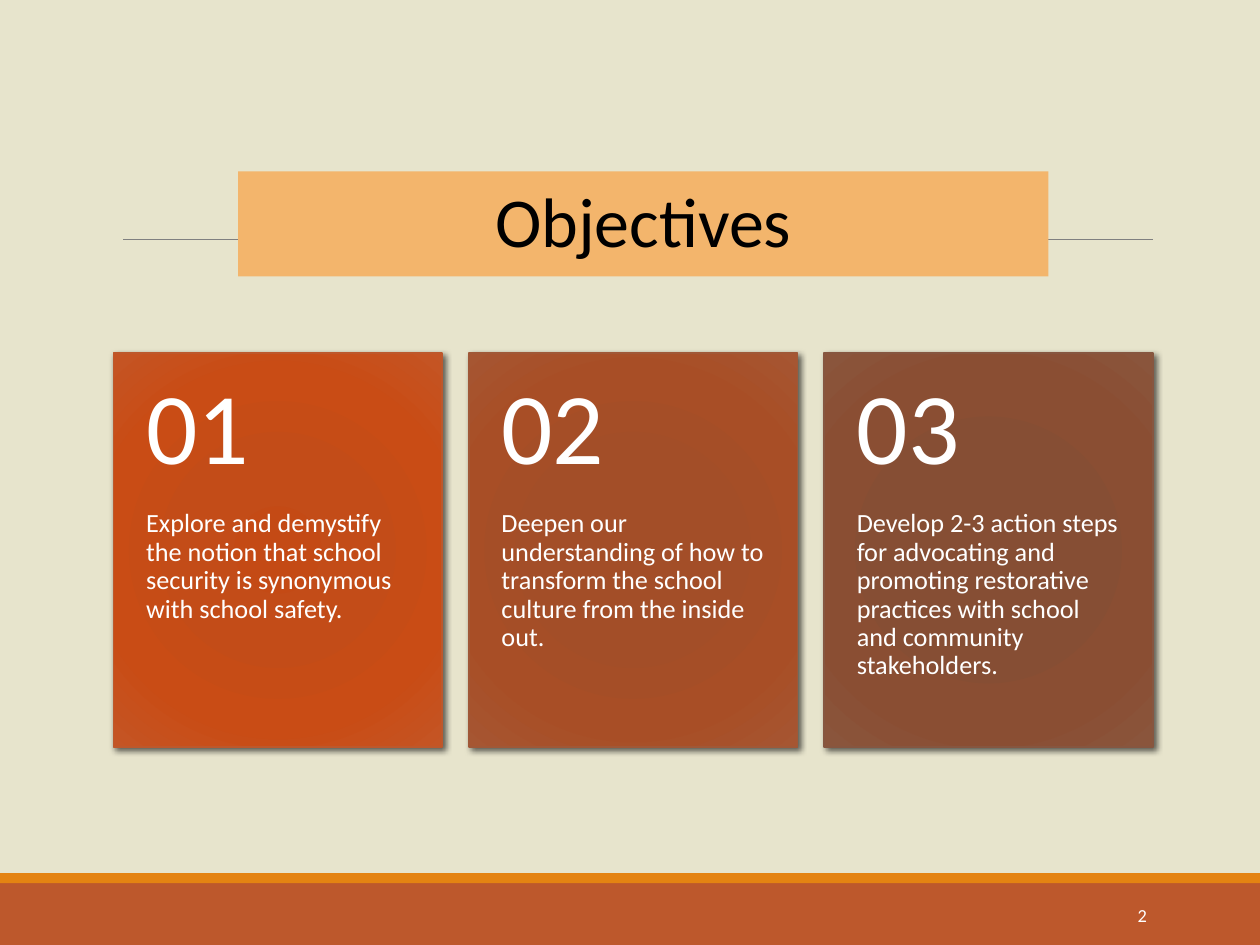
from dataclasses import dataclass

from lxml.etree import SubElement
from pptx import Presentation
from pptx.dml.color import RGBColor as RGB
from pptx.enum.shapes import MSO_CONNECTOR as CONN, MSO_SHAPE as SHAPE
from pptx.enum.text import MSO_ANCHOR as ANCHOR, MSO_AUTO_SIZE as AUTO, PP_ALIGN as ALIGN
from pptx.oxml import parse_xml
from pptx.oxml.ns import nsdecls, qn
from pptx.util import Inches, Pt


@dataclass(frozen=True)
class Theme:
    font: str = "Calibri"
    background: str = "E7E4CC"
    orange: str = "E48312"
    rust: str = "BD582C"
    banner: str = "F3B56C"
    rule: str = "808080"
    dark: str = "000000"
    light: str = "FFFFFF"
    title_size: float = 40
    number_size: float = 58
    body_size: float = 15
    page_size: float = 10.5


@dataclass(frozen=True)
class Card:
    text: str
    stops: tuple[str, str, str, str]
    border: str


THEME = Theme()
STOP_POSITIONS = (0, 34, 70, 100)
CARD_LEFT, CARD_TOP, CARD_STEP = 0.9, 2.8, 2.82
CARD_W, CARD_H, NUMBER_H = 2.61, 3.13, 1.25
CARDS = (
    Card("Explore and demystify the notion that school security is synonymous with school safety.",
         ("C44A15", "C34C18", "C94C15", "C45525"), "BD582C"),
    Card("Deepen our understanding of how to transform the school culture from the inside out.",
         ("A44C25", "A34E28", "A84E26", "A65632"), "A05837"),
    Card("Develop 2-3 action steps for advocating and promoting restorative practices "
         "with school and community stakeholders.",
         ("874C32", "864E34", "8A4E33", "8A553C"), "865640"),
)


def write_text(s, text: str, *, size: float, color: str = THEME.light, align=ALIGN.LEFT,
               anchor=ANCHOR.TOP, insets=(0.1, 0.05, 0.1, 0.05), spacing=None, after=0):
    tf = s.text_frame
    tf.word_wrap = True
    tf.vertical_anchor = anchor
    tf.margin_left, tf.margin_top, tf.margin_right, tf.margin_bottom = map(Inches, insets)
    p = tf.paragraphs[0]
    p.alignment, p.line_spacing, p.space_after = align, spacing, Pt(after)
    r = p.add_run()
    r.text = text
    r.font.name, r.font.size = THEME.font, Pt(size)
    r.font.color.rgb = RGB.from_string(color)


def add_text(slide, box: tuple, text: str, **fmt):
    write_text(slide.shapes.add_textbox(*map(Inches, box)), text, **fmt)


def fill_solid(s, color: str):
    s.fill.solid()
    s.fill.fore_color.rgb = RGB.from_string(color)


def add_bar(slide, top: float, height: float, color: str):
    s = slide.shapes.add_shape(SHAPE.RECTANGLE, 0, Inches(top), Inches(10), Inches(height))
    s.shadow.inherit = False
    fill_solid(s, color)
    s.line.fill.background()


def add_rule(slide, left: float, right: float, y: float):
    line = slide.shapes.add_connector(CONN.STRAIGHT, *map(Inches, (left, y, right, y)))
    line.line.color.rgb = RGB.from_string(THEME.rule)
    line.line.width = Pt(0.5)
    SubElement(line.element.spPr, qn("a:effectLst"))


def style_panel(s, card: Card):
    """Give the panel a radial gradient, a thin border and a soft shadow."""
    s.line.color.rgb = RGB.from_string(card.border)
    s.line.width = Pt(1)
    stops = "".join(f'<a:gs pos="{pos * 1000}"><a:srgbClr val="{color}"/></a:gs>'
                    for pos, color in zip(STOP_POSITIONS, card.stops))
    gradient = parse_xml(
        f'<a:gradFill {nsdecls("a")} rotWithShape="1"><a:gsLst>{stops}</a:gsLst><a:path path="circle">'
        '<a:fillToRect l="100000" t="100000" r="100000" b="100000"/></a:path></a:gradFill>')
    shadow = parse_xml(
        f'<a:effectLst {nsdecls("a")}><a:outerShdw blurRad="{Pt(3.5)}" dist="{Pt(2)}" dir="2700000" '
        'algn="br" rotWithShape="0"><a:srgbClr val="000000"><a:alpha val="60000"/></a:srgbClr>'
        '</a:outerShdw></a:effectLst>')
    sp_pr = s.element.spPr
    sp_pr.find(qn("a:prstGeom")).addnext(gradient)
    sp_pr.find(qn("a:ln")).addnext(shadow)


def add_card(slide, index: int, card: Card):
    left = CARD_LEFT + index * CARD_STEP
    panel = slide.shapes.add_shape(SHAPE.RECTANGLE, *map(Inches, (left, CARD_TOP, CARD_W, CARD_H)))
    style_panel(panel, card)
    add_text(slide, (left, CARD_TOP + NUMBER_H, CARD_W, CARD_H - NUMBER_H), card.text,
             size=THEME.body_size, insets=(0.26, 0, 0.26, 0.36), spacing=0.9)
    add_text(slide, (left, CARD_TOP, CARD_W, NUMBER_H), f"{index + 1:02}", size=THEME.number_size,
             anchor=ANCHOR.MIDDLE, insets=(0.26, 0.18, 0.26, 0.18), spacing=0.9)


def add_title(slide, text: str):
    """Fill the title placeholder and bring it in front of the rule."""
    title = slide.shapes.title
    title.left, title.top, title.width, title.height = map(Inches, (1.89, 1.36, 6.43, 0.77))
    fill_solid(title, THEME.banner)
    write_text(title, text, size=THEME.title_size, color=THEME.dark, align=ALIGN.CENTER)
    title.text_frame.auto_size = AUTO.SHAPE_TO_FIT_TEXT
    title.element.getparent().append(title.element)


def main():
    prs = Presentation()
    prs.slide_width, prs.slide_height = Inches(10), Inches(7.5)
    slide = prs.slides.add_slide(prs.slide_layouts[5])
    fill_solid(slide.background, THEME.background)
    add_bar(slide, 7, 0.5, THEME.rust)
    add_bar(slide, 6.93, 0.08, THEME.orange)
    add_rule(slide, 0.98, 9.15, 1.9)
    add_text(slide, (8.12, 7.06, 1.08, 0.4), "2", size=THEME.page_size,
             align=ALIGN.RIGHT, anchor=ANCHOR.MIDDLE, after=6)
    for index, card in enumerate(CARDS):
        add_card(slide, index, card)
    add_title(slide, "Objectives")
    prs.save("out.pptx")


if __name__ == "__main__":
    main()
